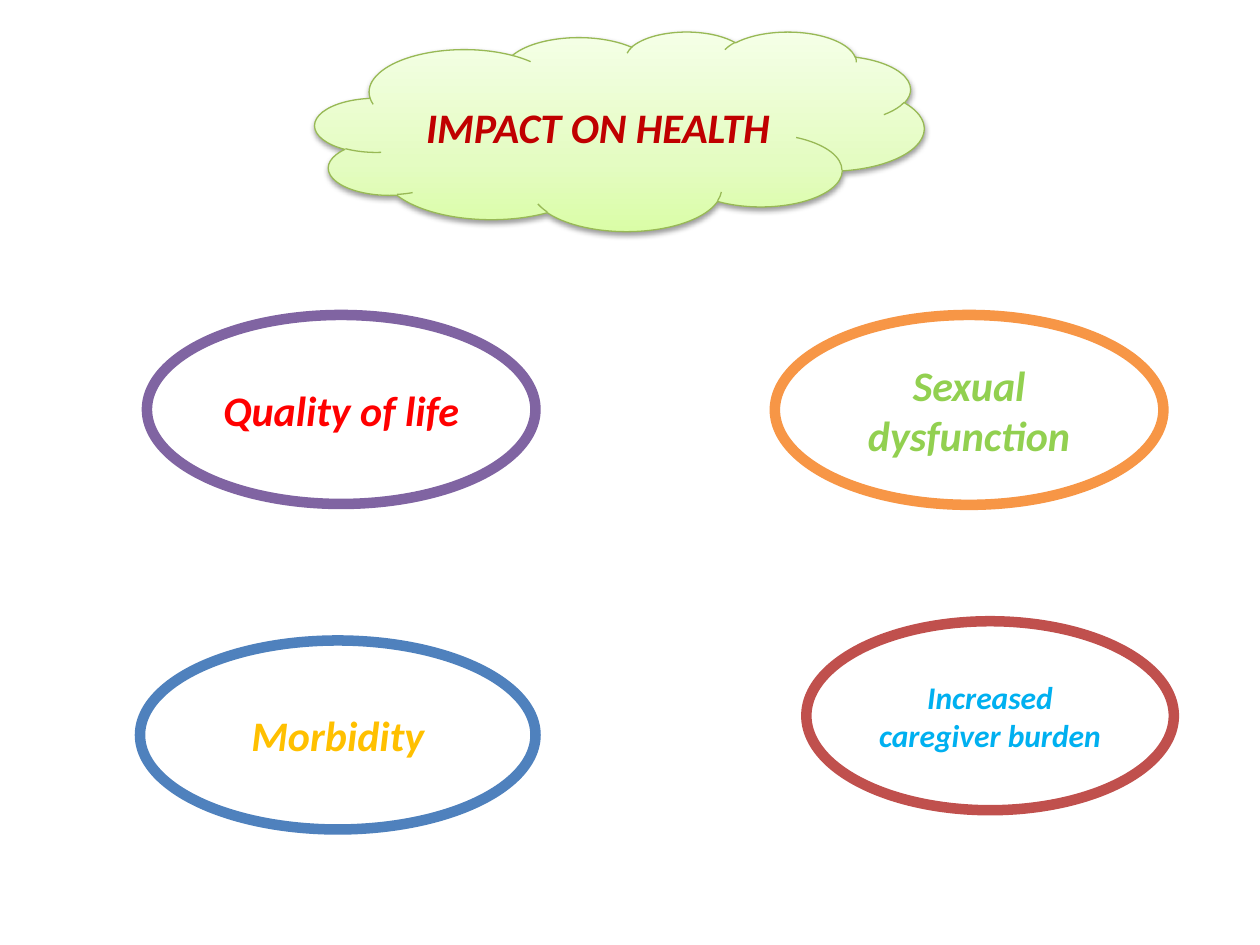
from copy import deepcopy
from dataclasses import dataclass

from lxml import etree
from pptx import Presentation
from pptx.dml.color import RGBColor
from pptx.enum.shapes import MSO_SHAPE
from pptx.enum.text import MSO_ANCHOR, PP_ALIGN
from pptx.oxml.ns import qn
from pptx.util import Pt

CLOUD = MSO_SHAPE.CLOUD
OVAL = MSO_SHAPE.OVAL
CENTER = PP_ALIGN.CENTER
MIDDLE = MSO_ANCHOR.MIDDLE


@dataclass(frozen=True)
class Theme:
    font: str = "Calibri"
    large: int = 24
    small: int = 18
    white: str = "FFFFFF"
    heading: str = "C00000"
    cloud_edge: str = "98B955"
    cloud_stops: tuple = ((0, "DAFDA7"), (0.35, "E4FCC2"), (1, "F5FFE7"))
    shadow: str = "000000"
    purple: str = "8064A2"
    orange: str = "F79646"
    blue: str = "4F81BD"
    brick: str = "C0504D"
    red: str = "FF0000"
    green: str = "92D050"
    gold: str = "FFC000"
    sky: str = "00B0F0"


theme = Theme()
prs = Presentation()
prs.slide_width = Pt(720)
prs.slide_height = Pt(540)
slide = prs.slides.add_slide(prs.slide_layouts[6])


def add_label(kind, box, wording, size, color, edge, edge_width):
    shape = slide.shapes.add_shape(kind, *map(Pt, box))
    shape.shadow.inherit = False
    shape.line.color.rgb = RGBColor.from_string(edge)
    shape.line.width = Pt(edge_width)
    frame = shape.text_frame
    frame.word_wrap = True
    frame.vertical_anchor = MIDDLE
    paragraph = frame.paragraphs[0]
    paragraph.text = wording
    paragraph.alignment = CENTER
    font = paragraph.font
    font.name = theme.font
    font.size = Pt(size)
    font.bold = True
    font.italic = True
    font.color.rgb = RGBColor.from_string(color)
    return shape


heading = add_label(CLOUD, (180, 18, 348, 114), "IMPACT ON HEALTH",
                    theme.large, theme.heading, theme.cloud_edge, 0.75)
heading.fill.gradient()
heading.fill.gradient_angle = 90
stop_list = heading.element.spPr.find(qn("a:gradFill")).find(qn("a:gsLst"))
stop_list.insert(1, deepcopy(stop_list[0]))
for stop, (position, color) in zip(heading.fill.gradient_stops, theme.cloud_stops):
    stop.position = position
    stop.color.rgb = RGBColor.from_string(color)

effects = heading.element.spPr.find(qn("a:effectLst"))
shadow = etree.SubElement(effects, qn("a:outerShdw"), blurRad=str(Pt(3.1)),
                          dist=str(Pt(1.6)), dir="5400000", rotWithShape="0")
shadow_color = etree.SubElement(shadow, qn("a:srgbClr"), val=theme.shadow)
etree.SubElement(shadow_color, qn("a:alpha"), val="38000")

impacts = [
    ("Quality of life", (84, 180, 222, 108), theme.large, theme.red, theme.purple),
    ("Sexual dysfunction", (442.8, 180, 222, 108.5), theme.large, theme.green, theme.orange),
    ("Morbidity", (80, 366, 226, 108), theme.large, theme.gold, theme.blue),
    ("Increased caregiver burden", (460.8, 355, 210, 108), theme.small, theme.sky, theme.brick),
]
for wording, box, size, color, edge in impacts:
    impact = add_label(OVAL, box, wording, size, color, edge, 6)
    impact.fill.solid()
    impact.fill.fore_color.rgb = RGBColor.from_string(theme.white)

prs.save("out.pptx")
